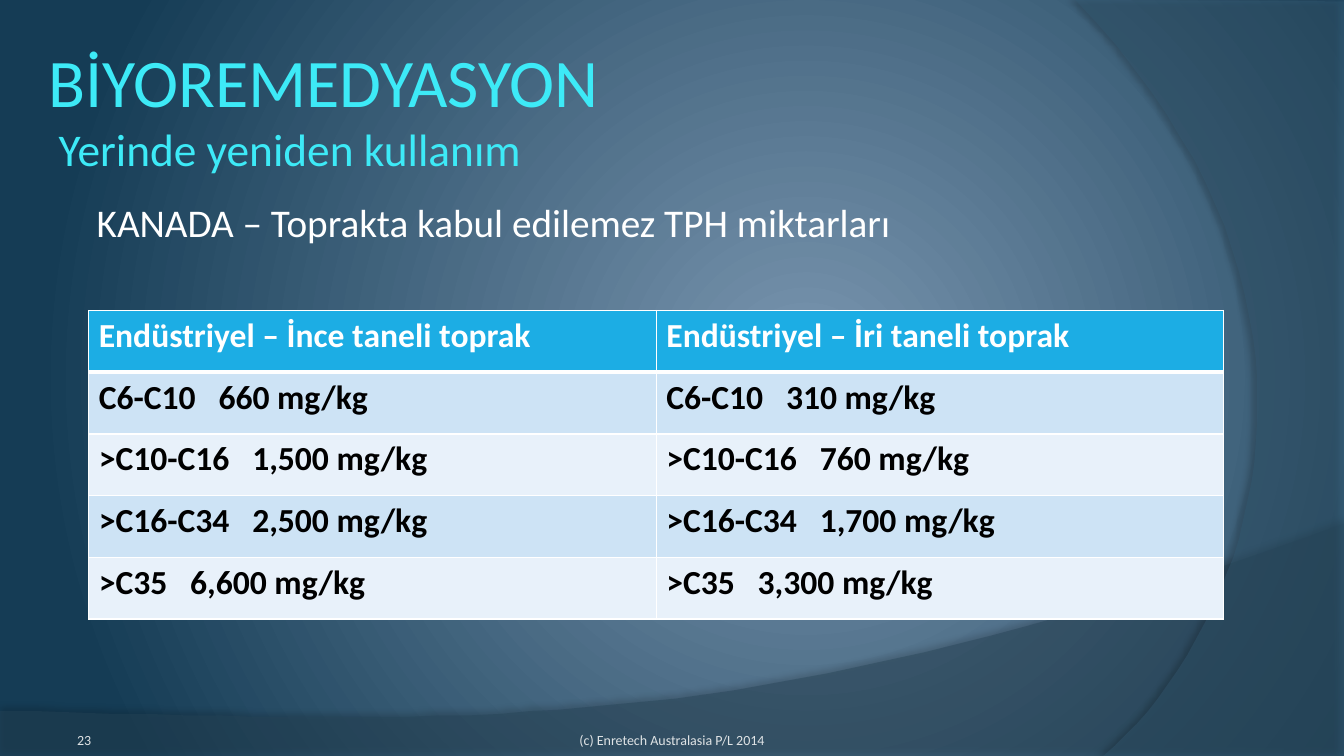
from pptx import Presentation
from pptx.dml.color import RGBColor
from pptx.enum.text import MSO_ANCHOR, MSO_AUTO_SIZE, PP_ALIGN
from pptx.oxml import parse_xml
from pptx.oxml.ns import nsdecls, qn
from pptx.util import Pt

FONT = "Calibri"
WIDE, HIGH = 960, 540
HEADS = ["Endüstriyel – İnce taneli toprak", "Endüstriyel – İri taneli toprak"]
LIMITS = [
    ("C6-C10", "660", "310"),
    (">C10-C16", "1,500", "760"),
    (">C16-C34", "2,500", "1,700"),
    (">C35", "6,600", "3,300"),
]


def color(code):
    """Turn a hex string into a colour."""
    return RGBColor.from_string(code)


def add_run(para, text, size, code, bold=False):
    """Add one formatted run to a paragraph."""
    run = para.add_run()
    run.text = text
    font = run.font
    font.name, font.size, font.bold = FONT, Pt(size), bold
    font.color.rgb = color(code)


def set_frame(frame, anchor, pads):
    """Set wrapping, anchor and insets of a text frame."""
    frame.word_wrap = True
    frame.auto_size = MSO_AUTO_SIZE.NONE
    frame.vertical_anchor = anchor
    frame.margin_left, frame.margin_top, frame.margin_right, frame.margin_bottom = map(Pt, pads)


def add_label(slide, box, text, size, code, anchor, pads, align=PP_ALIGN.LEFT):
    """Place a one-line text box."""
    frame = slide.shapes.add_textbox(*map(Pt, box)).text_frame
    set_frame(frame, anchor, pads)
    para = frame.paragraphs[0]
    para.alignment = align
    add_run(para, text, size, code)


def curve(ends, steps=40):
    """Return points along a cubic curve."""
    points = []
    for i in range(1, steps + 1):
        t = i / steps
        parts = ((1 - t) ** 3, 3 * t * (1 - t) ** 2, 3 * t * t * (1 - t), t ** 3)
        points.append(tuple(sum(k * p[a] for k, p in zip(parts, ends)) for a in (0, 1)))
    return points


def add_wave(slide, edge, ends, code, alpha, shade):
    """Draw a translucent wave with straight edges and one curved side."""
    pen = slide.shapes.build_freeform(*edge[0], scale=Pt(1))
    pen.add_line_segments(edge[1:] + curve(ends), close=True)
    wave = pen.convert_to_shape()
    wave.fill.solid()
    wave.fill.fore_color.rgb = color(code)
    wave.line.fill.background()
    props = wave.element.spPr
    tint = props.find(qn("a:solidFill"))[0]
    tint.append(parse_xml(f'<a:alpha {nsdecls("a")} val="{alpha * 1000}"/>'))
    depth, dist, angle = shade
    props.append(parse_xml(
        f'<a:effectLst {nsdecls("a")}><a:outerShdw blurRad="{Pt(4)}" dist="{Pt(dist)}" '
        f'dir="{angle * 60000}" algn="ctr" rotWithShape="0"><a:srgbClr val="000000">'
        f'<a:alpha val="{depth * 1000}"/></a:srgbClr></a:outerShdw></a:effectLst>'))


def add_back(slide):
    """Set the radial background and draw both waves."""
    slide.element.cSld.insert(0, parse_xml(
        f'<p:bg {nsdecls("p", "a")}><p:bgPr><a:gradFill rotWithShape="1"><a:gsLst>'
        '<a:gs pos="0"><a:srgbClr val="7A96B0"/></a:gs>'
        '<a:gs pos="100000"><a:srgbClr val="153C55"/></a:gs></a:gsLst>'
        '<a:path path="circle"><a:fillToRect l="60000" t="50000" r="40000" b="50000"/></a:path>'
        '</a:gradFill><a:effectLst/></p:bgPr></p:bg>'))
    add_wave(slide, [(0, 507.6), (0, HIGH), (WIDE, HIGH), (WIDE, 374.4)],
             [(WIDE, 374.4), (536.4, 524.9), (375.1, 517.7), (0, 507.6)],
             "264457", 45, (35, 3.5, 270))
    add_wave(slide, [(WIDE, 1.4), (WIDE, HIGH), (788.4, HIGH)],
             [(788.4, HIGH), (897.1, 445.7), (977, 216), (768, 0)],
             "335B74", 40, (45, 4, 180))


def add_title(slide, box):
    """Fill the title placeholder with two lines."""
    title = slide.shapes.title
    title.left, title.top, title.width, title.height = map(Pt, box)
    set_frame(title.text_frame, MSO_ANCHOR.MIDDLE, (3.6,) * 4)
    para = title.text_frame.paragraphs[0]
    para.alignment = PP_ALIGN.LEFT
    add_run(para, "BİYOREMEDYASYON", 48.6, "3DEAF7")
    para.add_line_break()
    add_run(para, " Yerinde yeniden kullanım", 32.4, "3DEAF7")


def set_edges(cell, base):
    """Give a cell white borders, with its own width below."""
    props = cell._tc.get_or_add_tcPr()
    for i, (side, width) in enumerate((("L", 1), ("R", 1), ("T", 1), ("B", base))):
        props.insert(i, parse_xml(
            f'<a:ln{side} {nsdecls("a")} w="{Pt(width)}"><a:solidFill>'
            f'<a:srgbClr val="FFFFFF"/></a:solidFill></a:ln{side}>'))


def add_grid(slide, box):
    """Build the table of limits inside the box."""
    rows = [HEADS] + [[f"{band}   {n} mg/kg" for n in nums] for band, *nums in LIMITS]
    grid = slide.shapes.add_table(len(rows), len(HEADS), *map(Pt, box)).table
    for r, texts in enumerate(rows):
        head = r == 0
        fill = "1CADE4" if head else ("E8F1FA", "CDE3F5")[r % 2]
        for c, text in enumerate(texts):
            cell = grid.cell(r, c)
            cell.fill.solid()
            cell.fill.fore_color.rgb = color(fill)
            set_edges(cell, 3 if head else 1)
            add_run(cell.text_frame.paragraphs[0], text, 24, "FFFFFF" if head else "000000", True)


def add_foot(slide, top, high):
    """Place the page number and copyright line."""
    add_label(slide, (48, top, 224, high), "23", 10, "DFE3E5",
              MSO_ANCHOR.BOTTOM, (7.2, 3.6, 7.2, 0))
    add_label(slide, (328, top, 304, high), "(c) Enretech Australasia P/L 2014", 10, "DFE3E5",
              MSO_ANCHOR.BOTTOM, (0, 3.6, 0, 0), PP_ALIGN.CENTER)


def main():
    """Build and save the slide."""
    deck = Presentation()
    deck.slide_width, deck.slide_height = Pt(WIDE), Pt(HIGH)
    slide = deck.slides.add_slide(deck.slide_layouts[5])
    add_back(slide)
    add_foot(slide, 505.4, 28.8)
    add_title(slide, (31, 31.7, 815.8, 90))
    add_label(slide, (62, 138.2, 815, 41), "KANADA – Toprakta kabul edilemez TPH miktarları",
              28, "FFFFFF", MSO_ANCHOR.MIDDLE, (7.2, 3.6, 7.2, 3.6))
    add_grid(slide, (63.4, 221.8, 810.8, 220.5))
    deck.save("out.pptx")


if __name__ == "__main__":
    main()
